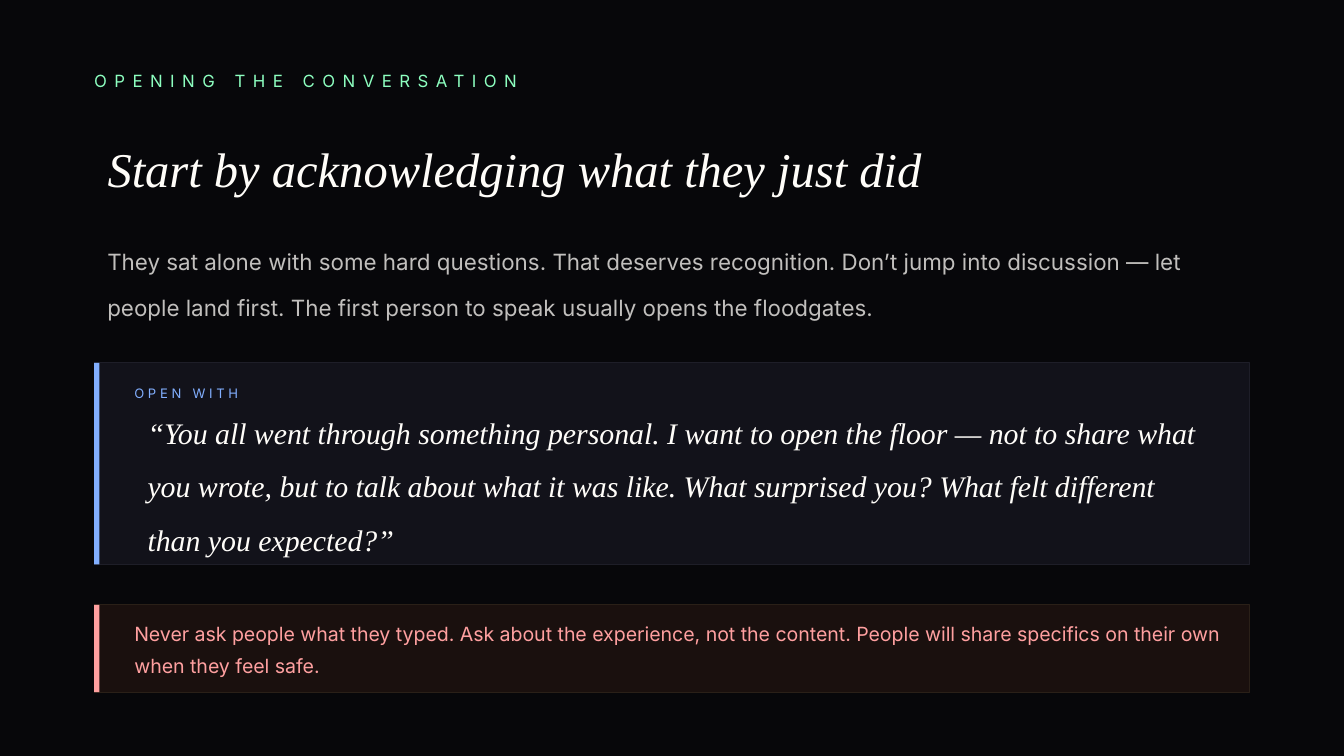
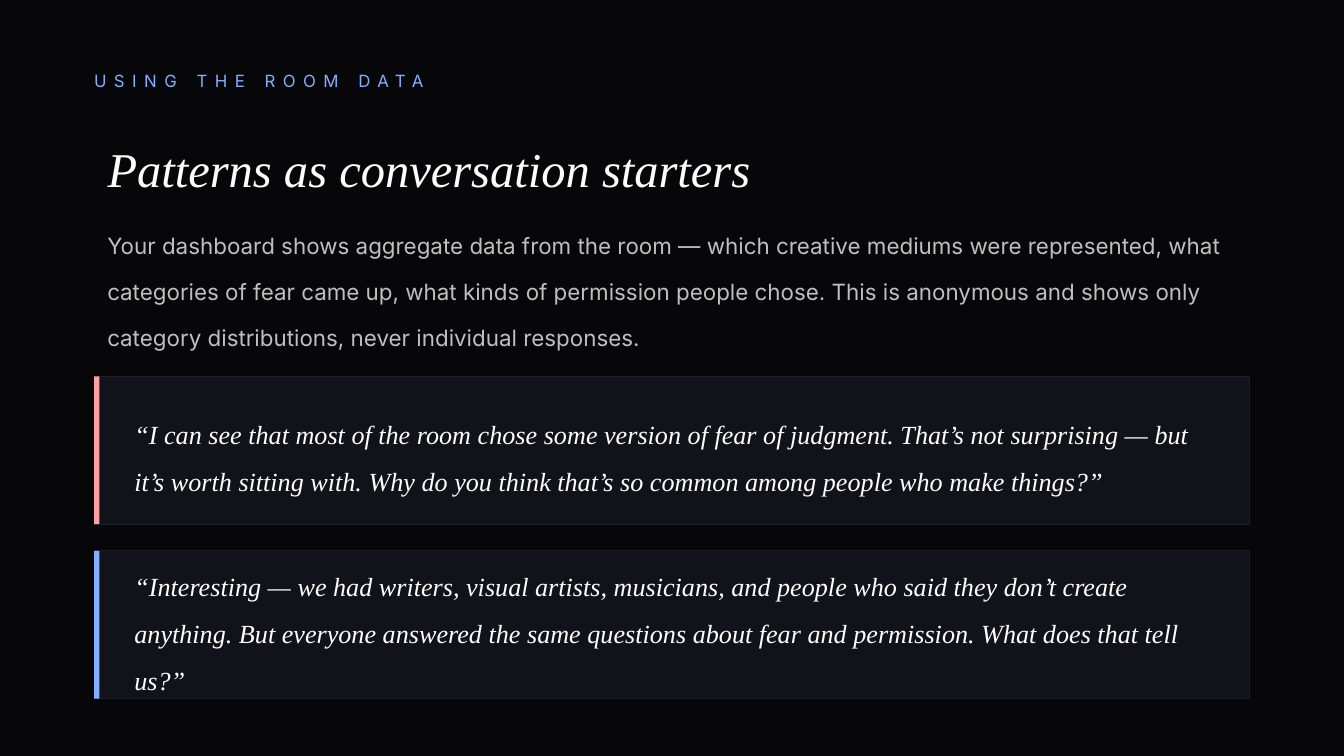
from pptx import Presentation
from pptx.dml.color import RGBColor
from pptx.enum.shapes import MSO_SHAPE
from pptx.enum.text import MSO_ANCHOR, MSO_AUTO_SIZE, PP_ALIGN
from pptx.util import Inches, Pt

# Colours
BACKGROUND = RGBColor(0x07, 0x07, 0x0A)
WHITE = RGBColor(0xFF, 0xFD, 0xF9)
GREY = RGBColor(0xC1, 0xBF, 0xBD)
MINT = RGBColor(0x8D, 0xFF, 0xC0)
BLUE = RGBColor(0x82, 0xAF, 0xFF)
CORAL = RGBColor(0xFF, 0xA0, 0xA0)
CARD = {"fill": RGBColor(0x12, 0x12, 0x1A), "line": RGBColor(0x1E, 0x1E, 0x28)}
WARNING_CARD = {"fill": RGBColor(0x1A, 0x10, 0x0E), "line": RGBColor(0x2A, 0x20, 0x18)}

# Text styles: font attributes, then letter spacing, line spacing and inset
SANS = {"name": "Inter"}
SERIF = {"name": "Times New Roman", "italic": True}
EYEBROW = {"font": {**SANS, "size": Pt(9)}, "tracking": 4}
LABEL = {"font": {**SANS, "size": Pt(7)}, "tracking": 2}
TITLE = {"font": {**SERIF, "size": Pt(26)}, "inset": True}
BODY = {"font": {**SANS, "size": Pt(12)}, "leading": 1.7, "inset": True}
LEAD_QUOTE = {"font": {**SERIF, "size": Pt(16)}, "leading": 1.5, "inset": True}
QUOTE = {"font": {**SERIF, "size": Pt(14)}, "leading": 1.5}
WARNING = {"font": {**SANS, "size": Pt(10.5)}, "leading": 1.4}

# Layout in inches
LEFT, WIDTH, HEAD_WIDTH = 0.7, 8.6, 8
BAR_WIDTH = 0.04
CARD_TEXT_LEFT, CARD_TEXT_WIDTH = 1, 8.1

# Content: "text" in a card gives its offset from the card top and its height
SLIDES = [
    {
        "eyebrow": ("OPENING THE CONVERSATION", MINT),
        "title": "Start by acknowledging what they just did",
        "body": "They sat alone with some hard questions. That deserves recognition. "
                "Don’t jump into discussion — let people land first. The first person "
                "to speak usually opens the floodgates.",
        "body_height": 0.7,
        "cards": [
            {"top": 2.7, "height": 1.5, "look": CARD, "accent": BLUE,
             "label": "OPEN WITH", "style": LEAD_QUOTE, "color": WHITE,
             "text": (0.45, 0.8,
                      "“You all went through something personal. I want to open the floor "
                      "— not to share what you wrote, but to talk about what it was like. "
                      "What surprised you? What felt different than you expected?”")},
            {"top": 4.5, "height": 0.65, "look": WARNING_CARD, "accent": CORAL,
             "style": WARNING, "color": CORAL,
             "text": (0.05, 0.5,
                      "Never ask people what they typed. Ask about the experience, not the "
                      "content. People will share specifics on their own when they feel "
                      "safe.")},
        ],
    },
    {
        "eyebrow": ("USING THE ROOM DATA", BLUE),
        "title": "Patterns as conversation starters",
        "body": "Your dashboard shows aggregate data from the room — which creative "
                "mediums were represented, what categories of fear came up, what kinds of "
                "permission people chose. This is anonymous and shows only category "
                "distributions, never individual responses.",
        "body_height": 0.8,
        "cards": [
            {"top": 2.8, "height": 1.1, "look": CARD, "accent": CORAL,
             "style": QUOTE, "color": WHITE,
             "text": (0.15, 0.8,
                      "“I can see that most of the room chose some version of fear of "
                      "judgment. That’s not surprising — but it’s worth sitting with. Why "
                      "do you think that’s so common among people who make things?”")},
            {"top": 4.1, "height": 1.1, "look": CARD, "accent": BLUE,
             "style": QUOTE, "color": WHITE,
             "text": (0.15, 0.8,
                      "“Interesting — we had writers, visual artists, musicians, and people "
                      "who said they don’t create anything. But everyone answered the same "
                      "questions about fear and permission. What does that tell us?”")},
        ],
    },
]


def write(sp, text, style, color):
    """Fill a text shape and apply one of the text styles."""
    tf = sp.text_frame
    tf.word_wrap = True
    tf.auto_size = MSO_AUTO_SIZE.NONE
    tf.vertical_anchor = MSO_ANCHOR.MIDDLE
    if not style.get("inset"):
        for side in ("left", "top", "right", "bottom"):
            setattr(tf, f"margin_{side}", 0)
    p = tf.paragraphs[0]
    p.alignment = PP_ALIGN.LEFT
    p.line_spacing = style.get("leading", 1.0)
    r = p.add_run()
    r.text = text
    for name, value in style["font"].items():
        setattr(r.font, name, value)
    r.font.color.rgb = color
    if "tracking" in style:
        r._r.get_or_add_rPr().set("spc", str(style["tracking"] * 100))


def add_text(s, box, text, style, color):
    write(s.shapes.add_textbox(*map(Inches, box)), text, style, color)


def add_rect(s, box, fill, line=None):
    sp = s.shapes.add_shape(MSO_SHAPE.RECTANGLE, *map(Inches, box))
    sp.shadow.inherit = False
    sp.fill.solid()
    sp.fill.fore_color.rgb = fill
    if line is None:
        sp.line.fill.background()
    else:
        sp.line.color.rgb = line
        sp.line.width = Pt(0.5)


def add_card(s, card):
    top, height = card["top"], card["height"]
    add_rect(s, (LEFT, top, WIDTH, height), **card["look"])
    add_rect(s, (LEFT, top, BAR_WIDTH, height), card["accent"])
    if "label" in card:
        add_text(s, (CARD_TEXT_LEFT, top + 0.1, HEAD_WIDTH, 0.25),
                 card["label"], LABEL, card["accent"])
    offset, text_height, text = card["text"]
    add_text(s, (CARD_TEXT_LEFT, top + offset, CARD_TEXT_WIDTH, text_height),
             text, card["style"], card["color"])


def add_slide(prs, content):
    s = prs.slides.add_slide(prs.slide_layouts[5])
    s.background.fill.solid()
    s.background.fill.fore_color.rgb = BACKGROUND

    # Heading and introduction
    eyebrow, color = content["eyebrow"]
    add_text(s, (LEFT, 0.4, HEAD_WIDTH, 0.4), eyebrow, EYEBROW, color)
    title = s.shapes.title
    title.left, title.top, title.width, title.height = map(
        Inches, (LEFT, 0.9, HEAD_WIDTH, 0.7))
    write(title, content["title"], TITLE, WHITE)
    add_text(s, (LEFT, 1.7, WIDTH, content["body_height"]), content["body"], BODY, GREY)

    # Cards with an accent bar
    for card in content["cards"]:
        add_card(s, card)


def main():
    prs = Presentation()
    # Widescreen, 16:9
    prs.slide_width = Inches(10)
    prs.slide_height = prs.slide_width * 9 // 16
    for content in SLIDES:
        add_slide(prs, content)
    prs.save("out.pptx")


if __name__ == "__main__":
    main()
